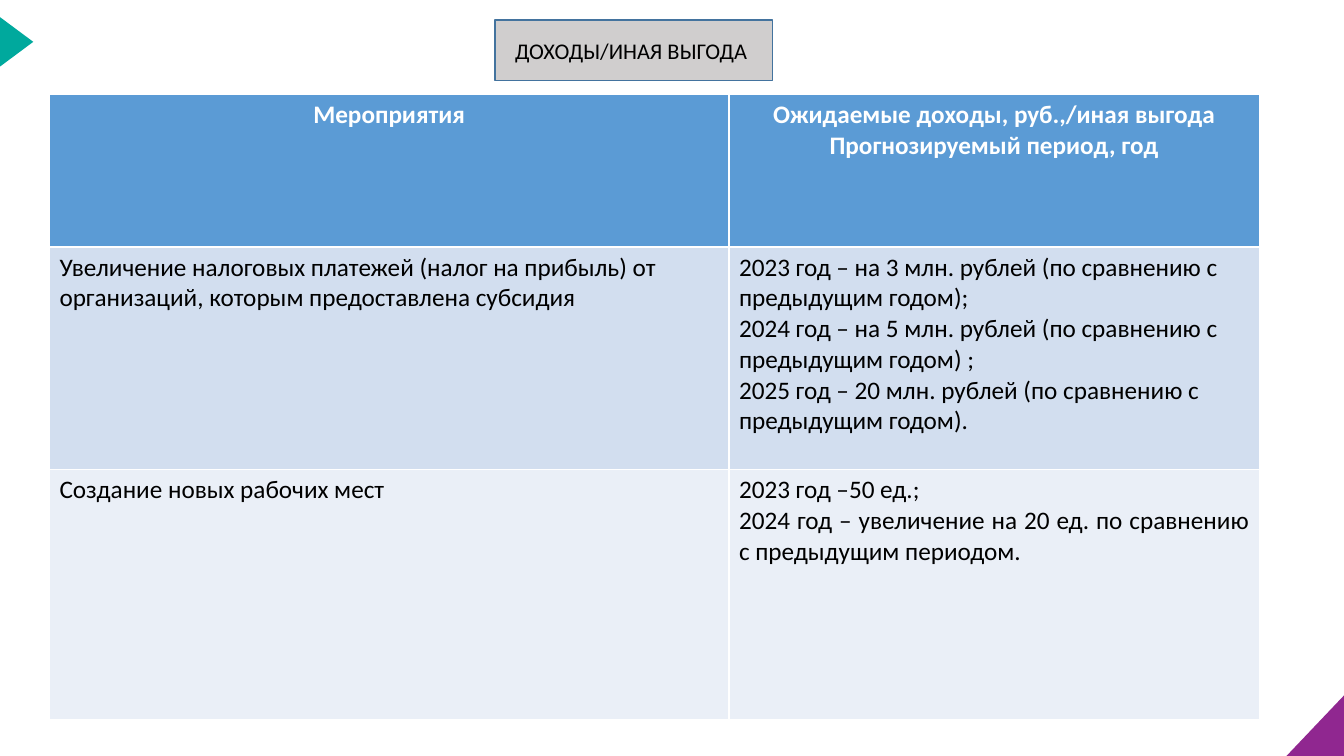
import pptx
import pptx.dml.color
import pptx.enum.shapes
import pptx.enum.text
import pptx.util

Inches = pptx.util.Inches
Align = pptx.enum.text.PP_ALIGN
Anchor = pptx.enum.text.MSO_ANCHOR
Shape = pptx.enum.shapes.MSO_SHAPE

TITLE = "ДОХОДЫ/ИНАЯ ВЫГОДА "
# Each cell is a list of paragraphs.
ROWS = [
    [
        ["Мероприятия"],
        ["Ожидаемые доходы, руб.,/иная выгода", "Прогнозируемый период, год"],
    ],
    [
        ["Увеличение налоговых платежей (налог на прибыль) от организаций, "
         "которым предоставлена субсидия"],
        ["2023 год – на 3 млн. рублей (по сравнению с предыдущим годом);",
         "2024 год – на 5 млн. рублей (по сравнению с предыдущим годом) ;",
         "2025 год – 20 млн. рублей (по сравнению с предыдущим годом)."],
    ],
    [
        ["Создание новых рабочих мест"],
        ["2023 год –50 ед.; ",
         "2024 год – увеличение на 20 ед. по сравнению с предыдущим периодом."],
    ],
]
ROW_FILLS = ["header", "band_dark", "band_light"]
JUSTIFIED_CELL = (2, 1)

SLIDE_SIZE = (13.33, 7.5)
TITLE_BOX = (4.91, 0.2, 2.75, 0.6)
TABLE_ORIGIN = (0.49, 0.94)
COLUMN_WIDTHS = [6.74, 5.26]
ROW_HEIGHTS = [1.51, 2.21, 2.48]
ARROW_BOX = (-0.08, 0.25, 0.49, 0.33)
CORNER_SIZE = (0.57, 0.6)

THEME = {
    "font": "Calibri",
    "sizes": {"title": pptx.util.Pt(16), "table": pptx.util.Pt(18)},
    "colors": {
        "header": "5B9BD5", "band_dark": "D2DEEF", "band_light": "EAEFF7",
        "title_fill": "D0CECE", "title_line": "43739E",
        "arrow": "00A99D", "corner": "902790",
        "text": "000000", "header_text": "FFFFFF",
    },
}


def paint(fill, color_name):
    fill.solid()
    fill.fore_color.rgb = color(color_name)


def color(name):
    return pptx.dml.color.RGBColor.from_string(THEME["colors"][name])


def write_paragraph(para, text, size, color_name, bold, align):
    para.text = text
    para.alignment = align
    formats = {"name": THEME["font"], "size": THEME["sizes"][size], "bold": bold}
    font = para.runs[0].font
    for name, value in formats.items():
        setattr(font, name, value)
    font.color.rgb = color(color_name)


def add_decorations(slide):
    arrow = slide.shapes.add_shape(Shape.ISOSCELES_TRIANGLE, *map(Inches, ARROW_BOX))
    arrow.rotation = 90
    right, bottom = map(Inches, SLIDE_SIZE)
    width, height = map(Inches, CORNER_SIZE)
    builder = slide.shapes.build_freeform(right, bottom)
    builder.add_line_segments([(right - width, bottom), (right, bottom - height)])
    corner = builder.convert_to_shape()
    for shape, color_name in ((arrow, "arrow"), (corner, "corner")):
        shape.shadow.inherit = False
        paint(shape.fill, color_name)
        shape.line.fill.background()


def add_title(slide):
    title = slide.shapes.title
    for name, value in zip(("left", "top", "width", "height"), TITLE_BOX):
        setattr(title, name, Inches(value))
    paint(title.fill, "title_fill")
    title.line.color.rgb = color("title_line")
    title.line.width = pptx.util.Pt(1)
    frame = title.text_frame
    frame.auto_size = pptx.enum.text.MSO_AUTO_SIZE.NONE
    frame.vertical_anchor = Anchor.MIDDLE
    write_paragraph(frame.paragraphs[0], TITLE, "title", "text", False, Align.CENTER)


def fill_cell(cell, paragraphs, fill_name, is_header, align):
    paint(cell.fill, fill_name)
    frame = cell.text_frame
    for index, text in enumerate(paragraphs):
        para = frame.add_paragraph() if index else frame.paragraphs[0]
        text_color = "header_text" if is_header else "text"
        write_paragraph(para, text, "table", text_color, is_header, align)


def add_income_table(slide):
    size = (sum(COLUMN_WIDTHS), sum(ROW_HEIGHTS))
    table = slide.shapes.add_table(
        len(ROWS), len(COLUMN_WIDTHS), *map(Inches, TABLE_ORIGIN + size)).table
    for column, width in zip(table.columns, COLUMN_WIDTHS):
        column.width = Inches(width)
    for row, height in zip(table.rows, ROW_HEIGHTS):
        row.height = Inches(height)
    for row_index, cells in enumerate(ROWS):
        is_header = row_index == 0
        for column_index, paragraphs in enumerate(cells):
            align = Align.CENTER if is_header else Align.LEFT
            if (row_index, column_index) == JUSTIFIED_CELL:
                align = Align.JUSTIFY
            fill_cell(table.cell(row_index, column_index), paragraphs,
                      ROW_FILLS[row_index], is_header, align)


def main():
    deck = pptx.Presentation()
    deck.slide_width, deck.slide_height = map(Inches, SLIDE_SIZE)
    slide = deck.slides.add_slide(deck.slide_layouts.get_by_name("Title Only"))
    add_decorations(slide)
    add_income_table(slide)
    add_title(slide)
    deck.save("out.pptx")


if __name__ == "__main__":
    main()
